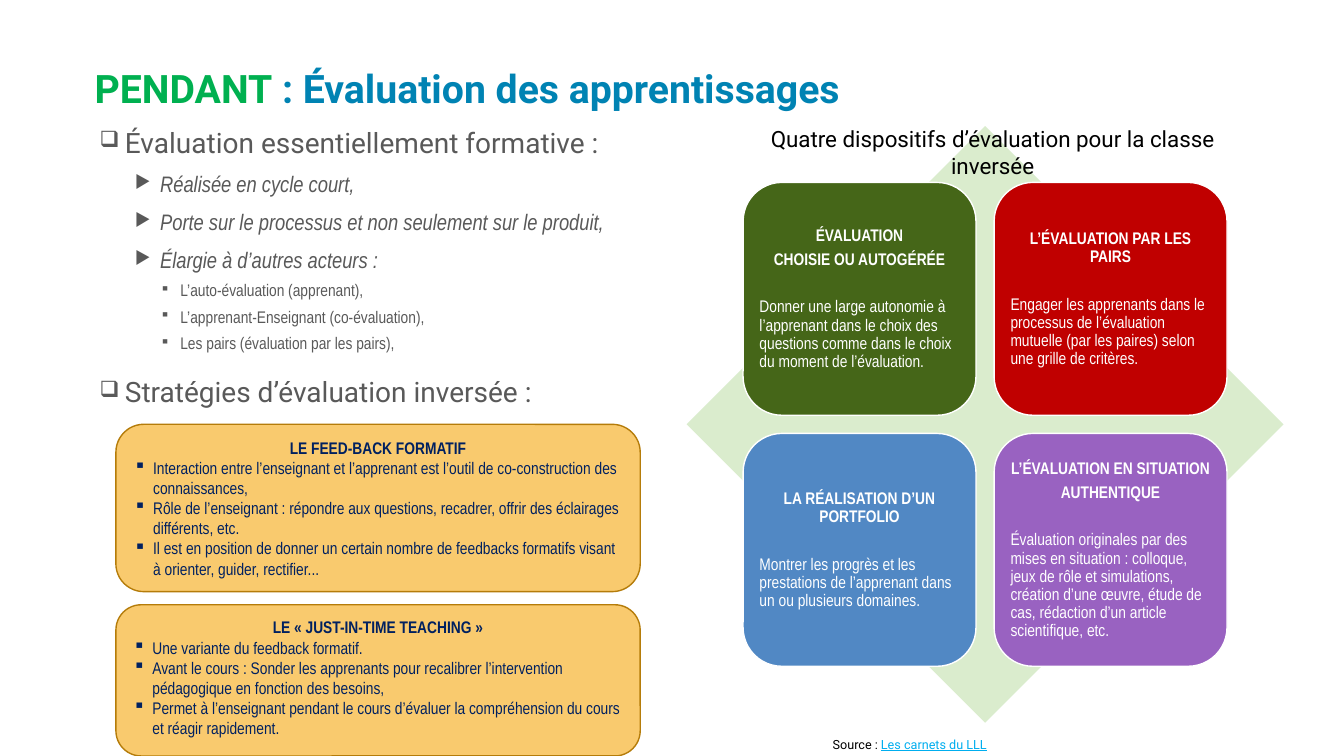
import dataclasses

import pptx
import pptx.dml.color
import pptx.enum.shapes
import pptx.enum.text
import pptx.oxml
import pptx.oxml.ns
import pptx.util
from pptx.util import Inches

Shapes = pptx.enum.shapes.MSO_SHAPE
Anchor = pptx.enum.text.MSO_ANCHOR
Align = pptx.enum.text.PP_ALIGN


@dataclasses.dataclass(frozen=True)
class Theme:
    heading_font: str = "Roboto"
    body_font: str = "Arial Narrow"
    green: str = "00B050"
    blue: str = "0083B3"
    gray: str = "595959"
    navy: str = "002060"
    black: str = "000000"
    white: str = "FFFFFF"
    link: str = "00AEEF"
    diamond: str = "DAECCD"
    strategy_fill: str = "F9CA6E"
    strategy_line: str = "B57C0A"
    title_size: int = 28
    heading_size: int = 20
    medium_size: int = 16
    small_size: int = 12
    source_size: int = 9


THEME = Theme()

OUTLINE = [
    (0, "Évaluation essentiellement formative :"),
    (1, "Réalisée en cycle court,"),
    (1, "Porte sur le processus et non seulement sur le produit,"),
    (1, "Élargie à d’autres acteurs :"),
    (2, "L’auto-évaluation (apprenant),"),
    (2, "L’apprenant-Enseignant (co-évaluation),"),
    (2, "Les pairs (évaluation par les pairs),"),
    (0, "Stratégies d’évaluation inversée :"),
]

OUTLINE_LEVELS = [
    ("❑", 0.3, 0.25, 18, THEME.heading_font, THEME.heading_size, False),
    ("▶", 0.65, 0.25, 10, THEME.body_font, THEME.medium_size, True),
    ("▪", 0.85, 0.2, 6, THEME.body_font, THEME.small_size, False),
]

STRATEGIES = [
    (4.21, 1.66, "LE FEED-BACK FORMATIF", [
        "Interaction entre l’enseignant et l’apprenant est l’outil de "
        "co-construction des connaissances,",
        "Rôle de l’enseignant : répondre aux questions, recadrer, offrir des "
        "éclairages différents, etc.",
        "Il est en position de donner un certain nombre de feedbacks formatifs "
        "visant à orienter, guider, rectifier...",
    ]),
    (6, 1.5, "LE « JUST-IN-TIME TEACHING »", [
        "Une variante du feedback formatif.",
        "Avant le cours : Sonder les apprenants pour recalibrer l’intervention "
        "pédagogique en fonction des besoins,",
        "Permet à l’enseignant pendant le cours d’évaluer la compréhension du "
        "cours et réagir rapidement.",
    ]),
]

DEVICES = [
    ("456618", ["ÉVALUATION", "CHOISIE OU AUTOGÉRÉE"],
     "Donner une large autonomie à l’apprenant dans le choix des questions "
     "comme dans le choix du moment de l’évaluation."),
    ("C00000", ["L’ÉVALUATION PAR LES PAIRS"],
     "Engager les apprenants dans le processus de l’évaluation mutuelle "
     "(par les paires) selon une grille de critères."),
    ("5188C4", ["LA RÉALISATION D’UN PORTFOLIO"],
     "Montrer les progrès et les prestations de l’apprenant dans un ou "
     "plusieurs domaines."),
    ("9962C1", ["L’ÉVALUATION EN SITUATION", "AUTHENTIQUE"],
     "Évaluation originales par des mises en situation : colloque, jeux de "
     "rôle et simulations, création d’une œuvre, étude de cas, rédaction d’un "
     "article scientifique, etc."),
]


def color(value):
    return pptx.dml.color.RGBColor.from_string(value)


def style_font(font, name, size, fill, bold=False, italic=False):
    font.name = name
    font.size = pptx.util.Pt(size)
    font.color.rgb = color(fill)
    font.bold = bold
    font.italic = italic


def add_text_box(slide, left, top, width, height, anchor=Anchor.TOP):
    box = slide.shapes.add_textbox(
        Inches(left), Inches(top), Inches(width), Inches(height))
    box.text_frame.word_wrap = True
    box.text_frame.vertical_anchor = anchor
    return box.text_frame


def add_panel(slide, kind, left, top, width, height, fill, line=None):
    shape = slide.shapes.add_shape(
        kind, Inches(left), Inches(top), Inches(width), Inches(height))
    shape.shadow.inherit = False
    shape.fill.solid()
    shape.fill.fore_color.rgb = color(fill)
    if line:
        shape.line.color.rgb = color(line)
        shape.line.width = pptx.util.Pt(1)
    else:
        shape.line.fill.background()
    shape.text_frame.word_wrap = True
    shape.text_frame.vertical_anchor = Anchor.TOP
    return shape.text_frame


def add_paragraph(frame, text="", align=Align.LEFT, before=0, after=0, spacing=1.0):
    first = frame.paragraphs[0]
    is_first = len(frame.paragraphs) == 1 and not first.runs
    paragraph = first if is_first else frame.add_paragraph()
    paragraph.alignment = align
    paragraph.line_spacing = spacing
    paragraph.space_before = pptx.util.Pt(0 if is_first else before)
    paragraph.space_after = pptx.util.Pt(after)
    if text:
        paragraph.add_run().text = text
    return paragraph


def add_bullet(paragraph, character, margin, hanging, fill, percent=100):
    properties = paragraph._p.get_or_add_pPr()
    properties.set("marL", str(Inches(margin)))
    properties.set("indent", str(-Inches(hanging)))
    namespace = pptx.oxml.ns.nsdecls("a")
    for markup in (
        f'<a:buClr {namespace}><a:srgbClr val="{fill}"/></a:buClr>',
        f'<a:buSzPct {namespace} val="{percent * 1000}"/>',
        f'<a:buChar {namespace} char="{character}"/>',
    ):
        properties.append(pptx.oxml.parse_xml(markup))


def add_title(slide):
    frame = add_text_box(slide, 0.84, 0.58, 11.58, 0.57, Anchor.BOTTOM)
    paragraph = add_paragraph(frame, spacing=0.8)
    for text, fill in (("PENDANT", THEME.green),
                       (" : Évaluation des apprentissages", THEME.blue)):
        run = paragraph.add_run()
        run.text = text
        style_font(run.font, THEME.heading_font, THEME.title_size, fill, bold=True)


def add_outline(slide):
    frame = add_text_box(slide, 0.84, 1.23, 7.32, 5.75)
    for level, text in OUTLINE:
        character, margin, hanging, before, name, size, italic = OUTLINE_LEVELS[level]
        paragraph = add_paragraph(frame, text, before=before, spacing=0.9)
        paragraph.level = level
        add_bullet(paragraph, character, margin, hanging, THEME.gray, 80)
        style_font(paragraph.font, name, size, THEME.gray, italic=italic)


def add_strategy(slide, top, height, heading, points):
    frame = add_panel(slide, Shapes.ROUNDED_RECTANGLE, 1.15, top, 5.2, height,
                      THEME.strategy_fill, THEME.strategy_line)
    paragraph = add_paragraph(frame, heading, Align.CENTER)
    style_font(paragraph.font, THEME.body_font, THEME.small_size, THEME.navy, bold=True)
    for point in points:
        paragraph = add_paragraph(frame, point)
        add_bullet(paragraph, "▪", 0.19, 0.19, THEME.navy)
        style_font(paragraph.font, THEME.body_font, THEME.small_size, THEME.navy)


def add_device(slide, index, fill, headings, description):
    row, column = divmod(index, 2)
    frame = add_panel(slide, Shapes.ROUNDED_RECTANGLE, 7.37 + 2.49 * column,
                      1.81 + 2.49 * row, 2.31, 2.31, fill, THEME.white)
    frame.vertical_anchor = Anchor.MIDDLE
    frame.margin_left = frame.margin_right = Inches(0.05)
    frame.margin_top = frame.margin_bottom = Inches(0.05)
    for heading in headings:
        paragraph = add_paragraph(frame, heading, Align.CENTER, after=4.2, spacing=0.9)
        style_font(paragraph.font, THEME.body_font, THEME.small_size, THEME.white, bold=True)
    paragraph = add_paragraph(frame, description, before=17, after=4.2, spacing=0.9)
    style_font(paragraph.font, THEME.body_font, THEME.small_size, THEME.white)


def add_source(slide):
    paragraph = add_paragraph(add_text_box(slide, 8.16, 7.26, 2.05, 0.25))
    for text, fill, underline in (("Source : ", THEME.black, False),
                                  ("Les carnets du LLL", THEME.link, True)):
        run = paragraph.add_run()
        run.text = text
        style_font(run.font, THEME.heading_font, THEME.source_size, fill)
        run.font.underline = underline


def add_caption(slide):
    frame = add_text_box(slide, 7.17, 1.19, 5.35, 0.37)
    paragraph = add_paragraph(
        frame, "Quatre dispositifs d’évaluation pour la classe inversée", Align.CENTER)
    style_font(paragraph.font, THEME.heading_font, THEME.medium_size, THEME.black)


def main():
    presentation = pptx.Presentation()
    presentation.slide_width = Inches(13.33)
    presentation.slide_height = Inches(7.5)
    slide = presentation.slides.add_slide(presentation.slide_layouts[6])
    add_title(slide)
    add_outline(slide)
    for strategy in STRATEGIES:
        add_strategy(slide, *strategy)
    add_panel(slide, Shapes.DIAMOND, 6.81, 1.25, 5.92, 5.92, THEME.diamond)
    for index, device in enumerate(DEVICES):
        add_device(slide, index, *device)
    add_source(slide)
    add_caption(slide)
    presentation.save("out.pptx")


if __name__ == "__main__":
    main()
